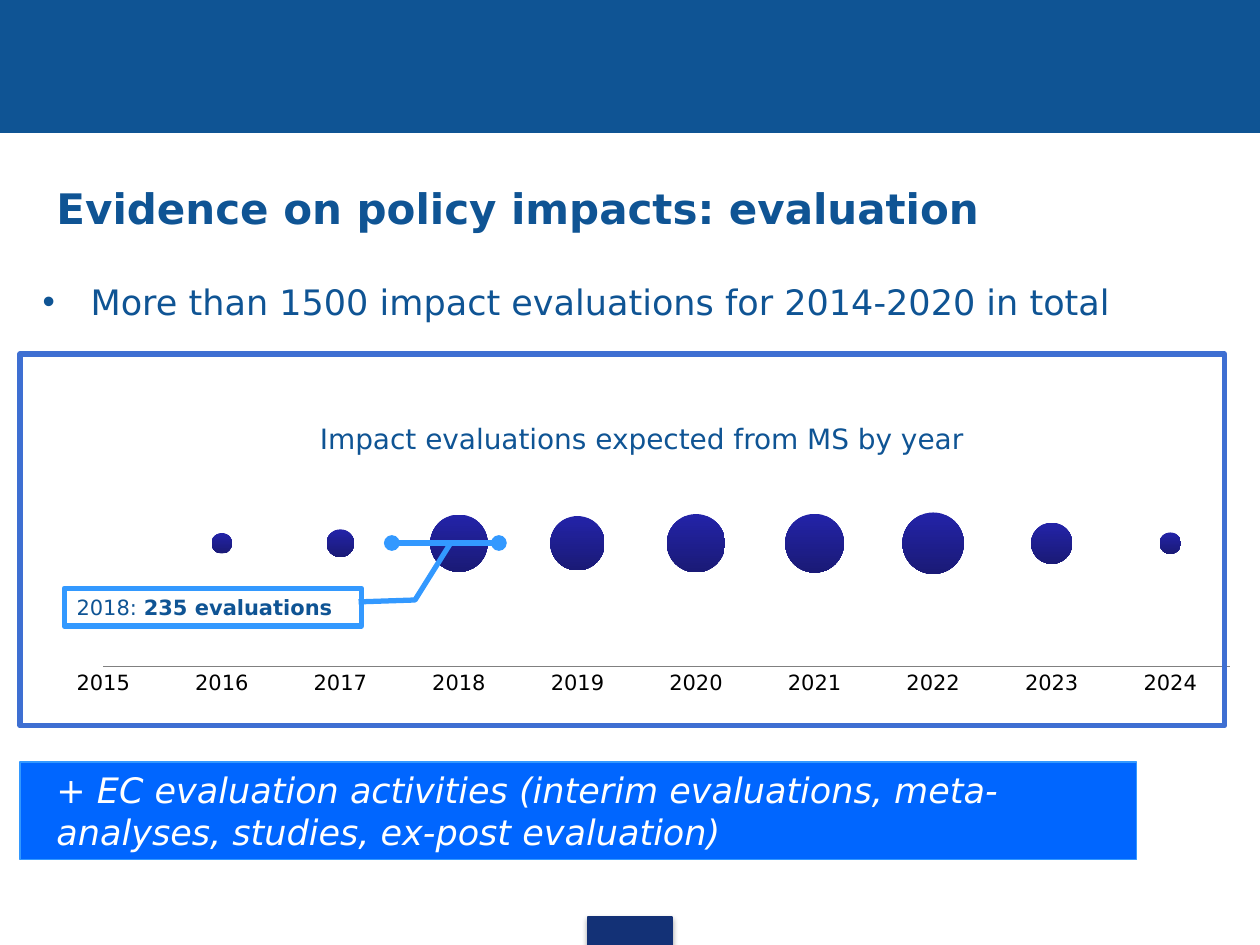
import dataclasses

import lxml.etree
import pptx
import pptx.chart.data
import pptx.dml.color
import pptx.enum.chart
import pptx.enum.shapes
import pptx.enum.text
import pptx.oxml.ns
import pptx.util

Pt = pptx.util.Pt
Color = pptx.dml.color.RGBColor.from_string
Shape = pptx.enum.shapes.MSO_SHAPE
Anchor = pptx.enum.text.MSO_ANCHOR
Align = pptx.enum.text.PP_ALIGN
qn = pptx.oxml.ns.qn


@dataclasses.dataclass(frozen=True)
class Theme:
    font: str = "DejaVu Sans"
    blue: str = "0F5494"
    navy: str = "133176"
    banner: str = "0066FF"
    accent: str = "3399FF"
    frame: str = "3E6FD2"
    bubble_top: str = "2323A8"
    bubble_bottom: str = "1A1A76"
    axis: str = "808080"
    white: str = "FFFFFF"
    black: str = "000000"
    title_size: int = 24
    body_size: int = 20
    chart_title_size: int = 16
    label_size: int = 12


THEME = Theme()
FIRST_YEAR = 2016
EVALUATIONS = [30, 55, 235, 211, 243, 247, 270, 122, 33]


def add_child(parent, tag, **attributes):
    child = lxml.etree.SubElement(parent, qn(tag))
    for name, value in attributes.items():
        child.set(name, str(value))
    return child


def add_box(page, box, fill=None, line=None, width=0.75, kind=Shape.RECTANGLE, shadow=False):
    shape = page.shapes.add_shape(kind, *map(Pt, box))
    if not shadow:
        shape.shadow.inherit = False
    if fill:
        shape.fill.solid()
        shape.fill.fore_color.rgb = Color(fill)
    else:
        shape.fill.background()
    if line:
        shape.line.color.rgb = Color(line)
        shape.line.width = Pt(width)
    else:
        shape.line.fill.background()
    return shape


def write(shape, *runs, size, color=THEME.blue, align=Align.LEFT, anchor=Anchor.TOP,
          margin=0, hanging=0, bullet=None, wrap=True):
    """Each run is a text, or a pair of a text and its font settings."""
    frame = shape.text_frame
    frame.word_wrap = wrap
    frame.vertical_anchor = anchor
    para = frame.paragraphs[0]
    para.alignment = align
    properties = para._p.get_or_add_pPr()
    properties.set("marL", str(Pt(margin)))
    properties.set("indent", str(Pt(-hanging)))
    if bullet:
        add_child(properties, "a:buFont", typeface="Arial")
        add_child(properties, "a:buChar", char=bullet)
    for run in runs:
        text, settings = (run, {}) if isinstance(run, str) else run
        span = para.add_run()
        span.text = text
        span.font.name = THEME.font
        span.font.size = Pt(size)
        span.font.color.rgb = Color(color)
        for name, value in settings.items():
            setattr(span.font, name, value)


def add_bubbles(page, box):
    data = pptx.chart.data.BubbleChartData()
    series = data.add_series("Series 1")
    for year, count in enumerate(EVALUATIONS, FIRST_YEAR):
        series.add_data_point(year, 100, count)
    chart = page.shapes.add_chart(
        pptx.enum.chart.XL_CHART_TYPE.BUBBLE, *map(Pt, box), data).chart
    chart.has_legend = False
    chart.has_title = False
    chart.font.name = THEME.font
    chart.font.size = Pt(THEME.label_size)
    chart.font.color.rgb = Color(THEME.black)

    # A new bubble chart already has one colour for all its points
    plot = chart.plots[0]
    plot.bubble_scale = 100
    style = plot.series[0].format
    style.line.fill.background()
    style.fill.gradient()
    style.fill.gradient_angle = 270
    for stop, color in zip(style.fill.gradient_stops, (THEME.bubble_top, THEME.bubble_bottom)):
        stop.color.rgb = Color(color)

    years, values = chart.category_axis, chart.value_axis
    for axis, low, high, step in ((years, FIRST_YEAR - 1, 2024.5, 1), (values, 0, 200, 100)):
        axis.minimum_scale, axis.maximum_scale, axis.major_unit = low, high, step
        axis.has_major_gridlines = False
        axis.major_tick_mark = pptx.enum.chart.XL_TICK_MARK.NONE
    values.visible = False
    years.tick_labels.number_format = "0"
    years.tick_labels.number_format_is_linked = False
    years.format.line.color.rgb = Color(THEME.axis)

    # Fixed inner plot area
    area = chart._chartSpace.find(".//" + qn("c:plotArea"))
    for old in area.findall(qn("c:layout")):
        area.remove(old)
    layout = lxml.etree.Element(qn("c:layout"))
    area.insert(0, layout)
    manual = add_child(layout, "c:manualLayout")
    add_child(manual, "c:layoutTarget", val="inner")
    for side in "xy":
        add_child(manual, f"c:{side}Mode", val="edge")
    for side, share in zip("xywh", (0.043, 0.02, 0.938, 0.856)):
        add_child(manual, f"c:{side}", val=share)


def add_marker(page, left, right, y):
    line = page.shapes.add_connector(
        pptx.enum.shapes.MSO_CONNECTOR.STRAIGHT, Pt(left), Pt(y), Pt(right), Pt(y))
    line.line.color.rgb = Color(THEME.accent)
    line.line.width = Pt(3)
    outline = line.line._get_or_add_ln()
    for end in ("a:headEnd", "a:tailEnd"):
        add_child(outline, end, type="oval")
    add_child(line._element.spPr, "a:effectLst")


def add_page_frame(page, width, height):
    add_box(page, (0, 0, width, 75.5), THEME.blue, THEME.blue)
    tab_width, tab_height = 48, 16
    add_box(page, ((width - tab_width) / 2, height - tab_height, tab_width, tab_height),
            THEME.navy, THEME.navy, shadow=True)


def add_headings(page, left, top):
    title = page.shapes.add_textbox(Pt(left + 22.3), Pt(top), Pt(543), Pt(36))
    write(title, ("Evidence on policy impacts: evaluation", {"bold": True}),
          size=THEME.title_size, wrap=False)
    point = add_box(page, (left, top + 56.2, 674.6, 31.7), THEME.white)
    write(point, "More than 1500 impact evaluations for 2014-2020 in total",
          size=THEME.body_size, margin=41.8, hanging=27.4, bullet="•")


def add_chart_panel(page, box):
    left, top, width, height = box
    add_bubbles(page, (left + 18, top + 34.6, 686.2, 164.2))

    # Callout for 2018
    add_marker(page, left + 212.4, left + 273.6, top + 108)
    callout = add_box(page, (left + 25.2, top + 133.9, 169.9, 21.6), THEME.white,
                      THEME.accent, 3, Shape.LINE_CALLOUT_2)
    for index, value in enumerate((0.36, 0.99, 0.31, 1.18, -1.2, 1.3)):
        callout.adjustments[index] = value
    write(callout, "2018: ", ("235 evaluations", {"bold": True}),
          size=THEME.label_size, anchor=Anchor.MIDDLE)

    # Heading and border
    heading = add_box(page, (left + 39.6, top + 17.3, 603.4, 61.2), THEME.white)
    write(heading, "Impact evaluations expected from MS by year", margin=28,
          size=THEME.chart_title_size, align=Align.CENTER, anchor=Anchor.MIDDLE)
    add_box(page, box, line=THEME.frame, width=3)


def add_banner(page, box):
    banner = add_box(page, box, THEME.banner, THEME.accent)
    text = "+ EC evaluation activities (interim evaluations, meta-analyses, studies, ex-post evaluation)"
    write(banner, (text, {"italic": True}), size=THEME.body_size, color=THEME.white, margin=13.7)


def main():
    deck = pptx.Presentation()
    deck.slide_width, deck.slide_height = Pt(720), Pt(540)
    page = deck.slides.add_slide(deck.slide_layouts[6])
    add_page_frame(page, 720, 540)
    add_banner(page, (11.5, 435.4, 637.9, 55.6))
    add_headings(page, 2.9, 100.8)
    add_chart_panel(page, (11.5, 202.3, 688.3, 212.4))
    deck.save("out.pptx")


if __name__ == "__main__":
    main()
